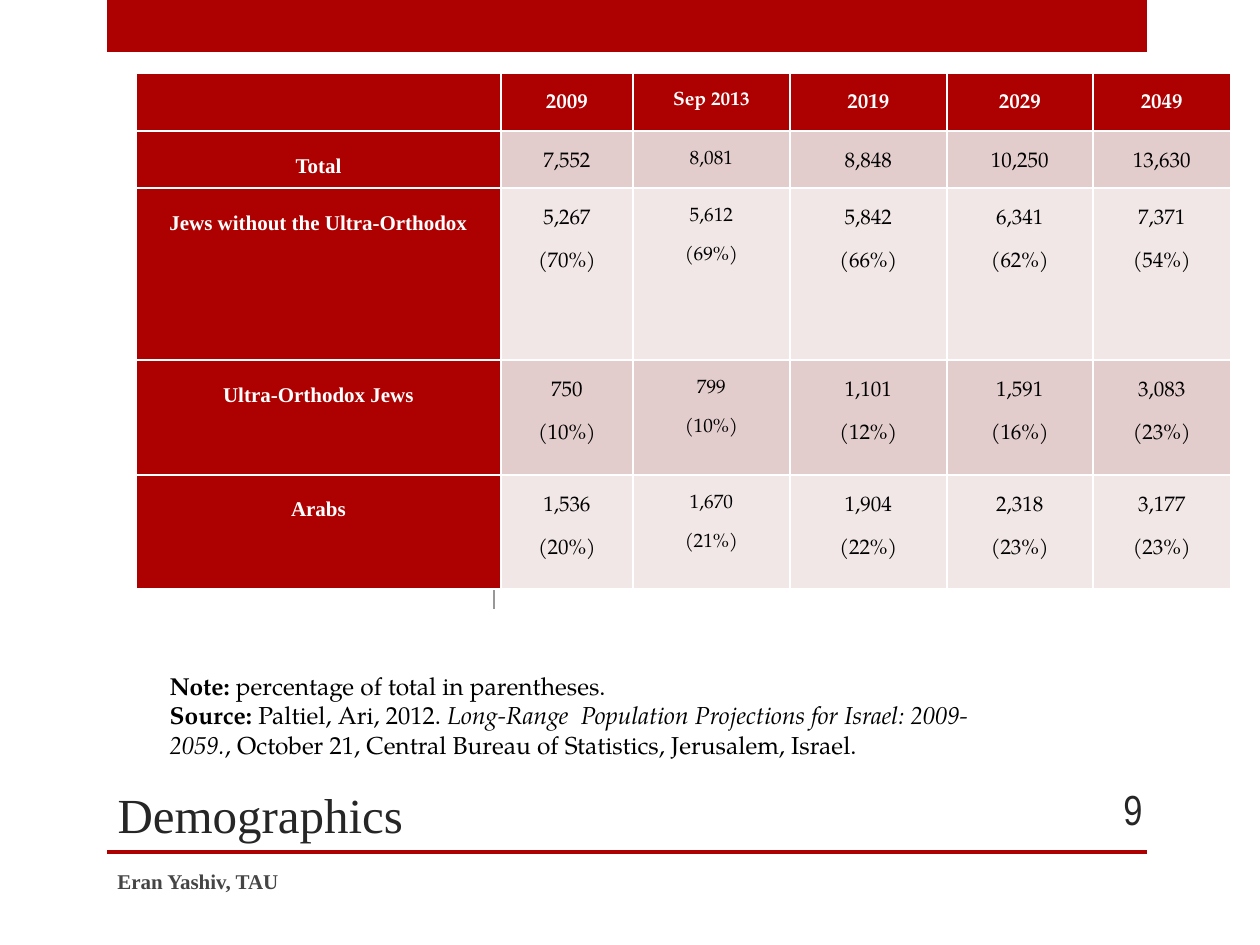
from pptx import Presentation
from pptx.dml.color import RGBColor
from pptx.enum.shapes import MSO_CONNECTOR, MSO_SHAPE
from pptx.enum.text import MSO_ANCHOR, MSO_AUTO_SIZE, PP_ALIGN
from pptx.oxml.ns import qn
from pptx.util import Emu, Pt
from lxml.etree import SubElement

SCALE = 914400 / 126
SERIF, BOOK = "Times New Roman", "TeX Gyre Pagella"
RED, WHITE, BLACK = "AD0101", "FFFFFF", "000000"


def rgb(value):
    return RGBColor.from_string(value)


def add_run(p, text, color, **fmt):
    r = p.add_run()
    r.text = text
    r.font.color.rgb = rgb(color)
    for name, value in fmt.items():
        setattr(r.font, name, value)


prs = Presentation()
prs.slide_width, prs.slide_height = [Emu(round(v * SCALE)) for v in (1260, 945)]
s = prs.slides.add_slide(prs.slide_layouts[1])

# Red bands at the top and above the footer
for box in [(107, 0, 1040, 52), (107, 850, 1040, 4)]:
    sp = s.shapes.add_shape(MSO_SHAPE.RECTANGLE, *[Emu(round(v * SCALE)) for v in box])
    sp.shadow.inherit = False
    sp.fill.solid()
    sp.fill.fore_color.rgb = rgb(RED)
    sp.line.fill.background()

# Grey vertical rule behind the table
ends = [Emu(round(v * SCALE)) for v in (494, 84, 494, 609)]
rule = s.shapes.add_connector(MSO_CONNECTOR.STRAIGHT, *ends)
rule.line.color.rgb = rgb("989898")
rule.line.width = Pt(1.25)
SubElement(rule._element.spPr, qn("a:effectLst"))

# Population table: the default style supplies the white borders
rows = [
    ["", "2009", "Sep 2013", "2019", "2029", "2049"],
    ["Total", "7,552", "8,081", "8,848", "10,250", "13,630"],
    ["Jews without the Ultra-Orthodox", "5,267\n(70%)", "5,612\n(69%)",
     "5,842\n(66%)", "6,341\n(62%)", "7,371\n(54%)"],
    ["Ultra-Orthodox Jews", "750\n(10%)", "799\n(10%)",
     "1,101\n(12%)", "1,591\n(16%)", "3,083\n(23%)"],
    ["Arabs", "1,536\n(20%)", "1,670\n(21%)",
     "1,904\n(22%)", "2,318\n(23%)", "3,177\n(23%)"],
]
col_widths = [365, 132, 157, 157, 146, 138]
row_heights = [58, 57, 172, 115, 114]
box = (136, 73, sum(col_widths), sum(row_heights))
table = s.shapes.add_table(len(rows), len(col_widths),
                           *[Emu(round(v * SCALE)) for v in box]).table
table.first_col = True
for col, width in zip(table.columns, col_widths):
    col.width = Emu(round(width * SCALE))
for row, height in zip(table.rows, row_heights):
    row.height = Emu(round(height * SCALE))

for i, values in enumerate(rows):
    for j, value in enumerate(values):
        cell = table.cell(i, j)
        heading = i == 0 or j == 0
        cell.fill.solid()
        cell.fill.fore_color.rgb = rgb(RED if heading else "E3CCCC" if i % 2 else "F1E7E7")
        cell.margin_left = cell.margin_right = Emu(round(8 * SCALE))
        cell.margin_top = cell.margin_bottom = 0
        if not value:
            continue
        tf = cell.text_frame
        for k, line in enumerate(value.split("\n")):
            p = tf.add_paragraph() if k else tf.paragraphs[0]
            p.alignment = PP_ALIGN.CENTER
            p.line_spacing = 2.0
            add_run(p, line, WHITE if heading else BLACK, bold=heading,
                    size=Pt(11 if j == 2 else 12), name=SERIF if j == 0 else BOOK)

# Title, note, footer and page number
title, body = s.shapes.title, s.placeholders[1]
footer, number = [s.shapes.add_textbox(0, 0, 0, 0) for _ in range(2)]
for sp, box, anchor in [
    (title, (105, 630, 1071, 220), MSO_ANCHOR.BOTTOM),
    (body, (157, 640, 872, 189), MSO_ANCHOR.MIDDLE),
    (footer, (105, 856, 672, 50), MSO_ANCHOR.MIDDLE),
    (number, (1050, 784, 105, 50), MSO_ANCHOR.MIDDLE),
]:
    sp.left, sp.top, sp.width, sp.height = [Emu(round(v * SCALE)) for v in box]
    sp.text_frame.word_wrap = True
    sp.text_frame.auto_size = MSO_AUTO_SIZE.NONE
    sp.text_frame.vertical_anchor = anchor

for sp, text, align, color, fmt in [
    (title, "Demographics", PP_ALIGN.LEFT, "262626", {"size": Pt(28), "name": SERIF}),
    (footer, "Eran Yashiv, TAU", PP_ALIGN.LEFT, "454545",
     {"size": Pt(12), "name": SERIF, "bold": True}),
    (number, "9", PP_ALIGN.RIGHT, "262626", {"size": Pt(24), "name": "Arial Narrow"}),
]:
    p = sp.text_frame.paragraphs[0]
    p.alignment = align
    add_run(p, text, color, **fmt)

# Note and source, without bullets
notes = [
    [("Note: ", {"bold": True}), ("percentage of total in parentheses.", {})],
    [("Source: ", {"bold": True}), ("Paltiel, Ari, 2012. ", {}),
     ("Long-Range  Population Projections for Israel: 2009-2059.", {"italic": True}),
     (", October 21, Central Bureau of Statistics, Jerusalem, Israel.", {})],
]
tf = body.text_frame
tf.margin_bottom = Emu(round(45 * SCALE))
for k, runs in enumerate(notes):
    p = tf.add_paragraph() if k else tf.paragraphs[0]
    p.space_before = Pt(0)
    pPr = p._p.get_or_add_pPr()
    pPr.set("marL", "0")
    pPr.set("indent", "0")
    SubElement(pPr, qn("a:buNone"))
    for text, fmt in runs:
        add_run(p, text, BLACK, size=Pt(14), name=BOOK, **fmt)

prs.save("out.pptx")
